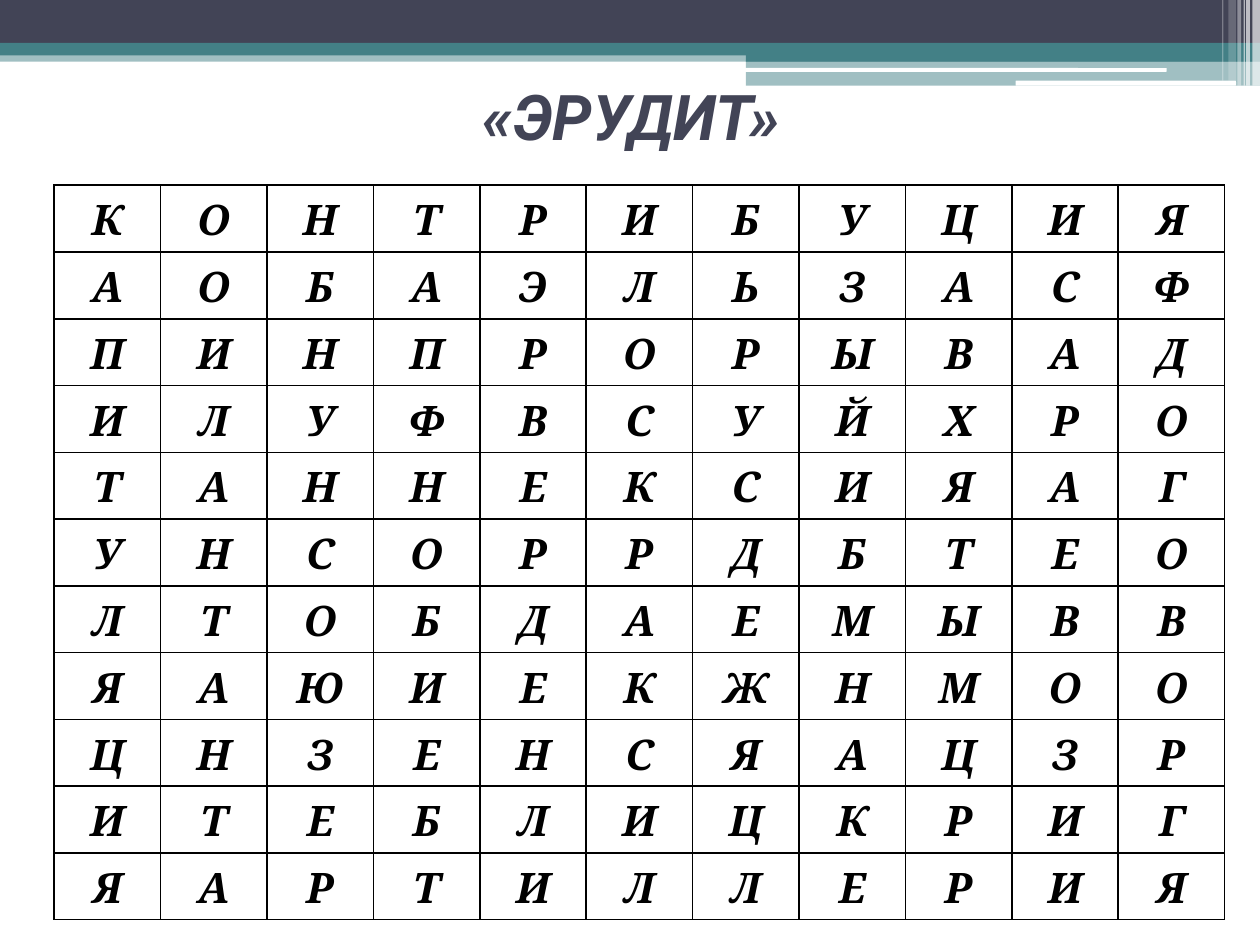
from lxml.etree import SubElement
from pptx import Presentation
from pptx.dml.color import RGBColor
from pptx.enum.shapes import MSO_SHAPE
from pptx.enum.text import MSO_ANCHOR, PP_ALIGN
from pptx.oxml import parse_xml
from pptx.oxml.ns import nsdecls, qn
from pptx.util import Inches, Pt

DARK, TEAL, WHITE, BLACK = "424456", "438086", "FFFFFF", "000000"

# Left, top, width, height, colour, opacity in percent
BANDS = [
    (0, 0.4, 10, 0.09, TEAL, 50),
    (0, 0, 10, 0.34, DARK, 100),
    (0, 0.34, 10, 0.1, TEAL, 100),
    (5.92, 0.39, 4.08, 0.1, TEAL, 100),
    (5.92, 0.48, 4.08, 0.2, TEAL, 50),
]
BARS = [
    (5.91, 0.54, 3.35, 0.03, WHITE, 100),
    (8.06, 0.64, 1.75, 0.04, WHITE, 100),
]
# Left, width, height, opacity of the upright stripes
STRIPES = [
    (9.94, 0.06, 0.68, 65),
    (9.89, 0.03, 0.68, 65),
    (9.87, 0.01, 0.68, 60),
    (9.82, 0.03, 0.68, 40),
    (9.75, 0.06, 0.64, 20),
    (9.7, 0.01, 0.64, 30),
]
ROWS = [
    "КОНТРИБУЦИЯ",
    "АОБАЭЛЬЗАСФ",
    "ПИНПРОРЫВАД",
    "ИЛУФВСУЙХРО",
    "ТАННЕКСИЯАГ",
    "УНСОРРДБТЕО",
    "ЛТОБДАЕМЫВВ",
    "ЯАЮИЕКЖНМОО",
    "ЦНЗЕНСЯАЦЗР",
    "ИТЕБЛИЦКРИГ",
    "ЯАРТИЛЛЕРИЯ",
]


def color(code):
    return RGBColor.from_string(code)


def apply(obj, form):
    for name, value in form.items():
        setattr(obj, name, value)


class Page:
    head = {"name": "Roboto", "size": Pt(36), "bold": True, "italic": True}
    letter = {"name": "Cambria", "size": Pt(24), "bold": True, "italic": True}
    inset = {
        "margin_left": Inches(0.07), "margin_right": Inches(0.07),
        "margin_top": 0, "margin_bottom": 0,
        "vertical_anchor": MSO_ANCHOR.MIDDLE,
    }

    def __init__(self, slide):
        self.slide = slide
        self.shapes = slide.shapes

    def band(self, left, top, width, height, code, alpha=100,
             kind=MSO_SHAPE.RECTANGLE):
        shape = self.shapes.add_shape(
            kind, Inches(left), Inches(top), Inches(width), Inches(height))
        shape.shadow.inherit = False
        shape.line.fill.background()
        shape.fill.solid()
        shape.fill.fore_color.rgb = color(code)
        if alpha < 100:
            tint = shape._element.spPr.find(".//" + qn("a:srgbClr"))
            SubElement(tint, qn("a:alpha"), val=str(alpha * 1000))

    def label(self, frame, text, form, code, space=None):
        para = frame.paragraphs[0]
        apply(para, {"alignment": PP_ALIGN.CENTER, "line_spacing": space})
        run = para.add_run()
        run.text = text
        apply(run.font, form)
        run.font.color.rgb = color(code)

    def title(self, text, left, top, width, height):
        shape = self.shapes.title
        apply(shape, {"left": Inches(left), "top": Inches(top),
                      "width": Inches(width), "height": Inches(height)})
        shape.text_frame.vertical_anchor = MSO_ANCHOR.MIDDLE
        self.label(shape.text_frame, text, self.head, DARK)
        # Bring the title in front of the bands
        self.shapes._spTree.append(shape._element)

    def border(self, cell, code):
        props = cell._tc.get_or_add_tcPr()
        for spot, side in enumerate(("lnL", "lnR", "lnT", "lnB")):
            props.insert(spot, parse_xml(
                f'<a:{side} {nsdecls("a")} w="{Pt(1)}"><a:solidFill>'
                f'<a:srgbClr val="{code}"/></a:solidFill></a:{side}>'))

    def grid(self, rows, left, top, width, height):
        table = self.shapes.add_table(
            len(rows), len(rows[0]), Inches(left), Inches(top),
            Inches(width), Inches(height)).table
        apply(table, {"first_row": False, "horz_banding": False})
        for y, row in enumerate(rows):
            for x, text in enumerate(row):
                cell = table.cell(y, x)
                apply(cell, self.inset)
                cell.fill.background()
                self.border(cell, BLACK)
                self.label(cell.text_frame, text, self.letter, BLACK, 1.15)


def main():
    deck = Presentation()
    apply(deck, {"slide_width": Inches(10), "slide_height": Inches(7.5)})
    page = Page(deck.slides.add_slide(deck.slide_layouts[5]))

    # Header decoration
    for band in BANDS:
        page.band(*band)
    for bar in BARS:
        page.band(*bar, kind=MSO_SHAPE.ROUNDED_RECTANGLE)
    for left, width, height, alpha in STRIPES:
        page.band(left, 0, width, height, WHITE, alpha)

    # Title and letter grid
    page.title("«ЭРУДИТ»", 0.51, 0.52, 9, 0.79)
    page.grid(ROWS, 0.43, 1.47, 9.29, 5.83)

    deck.save("out.pptx")


if __name__ == "__main__":
    main()
